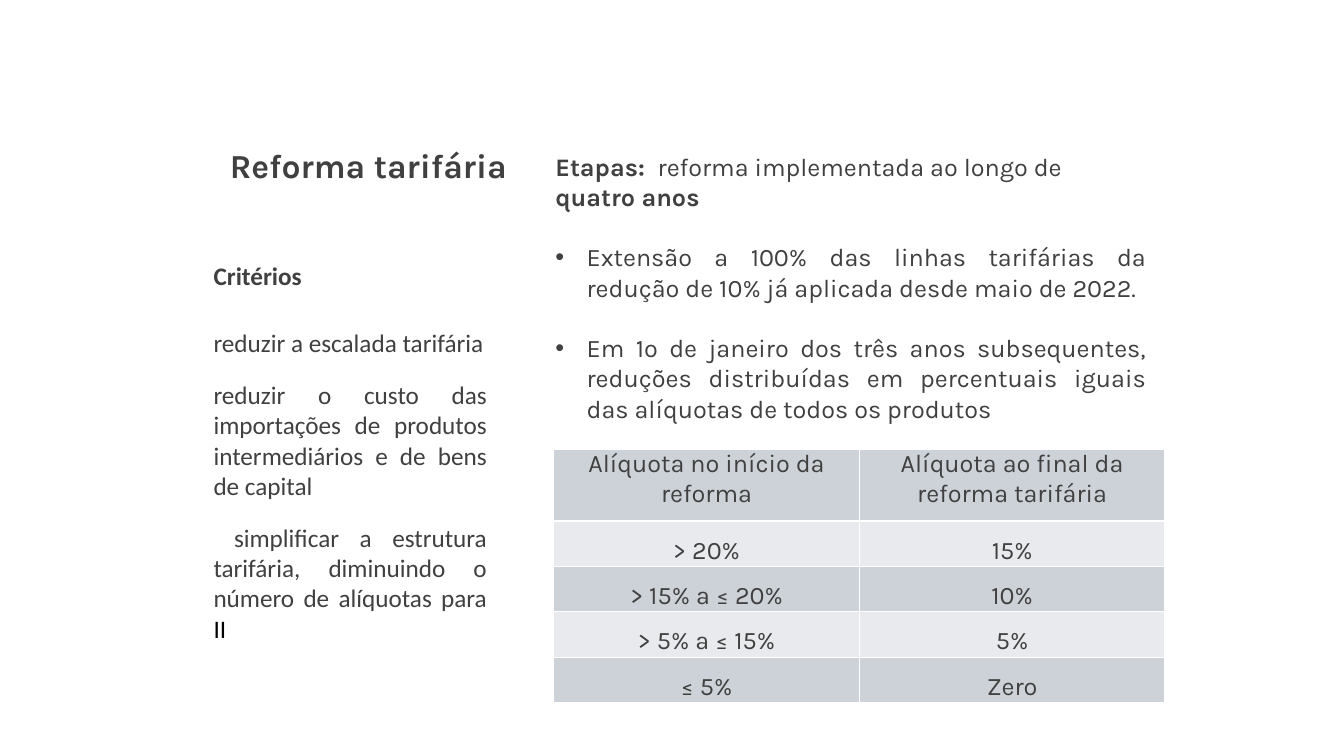
from lxml import etree
from pptx import Presentation
from pptx import util as u
from pptx.dml.color import RGBColor
from pptx.enum import text
from pptx.oxml import ns

GREY = RGBColor(0x40, 0x40, 0x40)
BLACK = RGBColor(0, 0, 0)
BAND_DARK = RGBColor(0xCC, 0xD2, 0xD8)
BAND_LIGHT = RGBColor(0xE8, 0xEA, 0xED)
JUSTIFY, CENTER = text.PP_ALIGN.JUSTIFY, text.PP_ALIGN.CENTER


def add_box(left, top, width, height):
    tf = slide.shapes.add_textbox(u.Cm(left), u.Cm(top), u.Cm(width), u.Cm(height)).text_frame
    tf.word_wrap = True
    return tf


def write(p, runs, font="Karla", size=18, **layout):
    """Fill a paragraph with (text, bold, colour) runs and set its layout."""
    for name, value in layout.items():
        setattr(p, name, value)
    for words, bold, colour in runs:
        r = p.add_run()
        r.text = words
        r.font.color.rgb = colour
        for name, value in {"name": font, "size": u.Pt(size), "bold": bold}.items():
            setattr(r.font, name, value)


prs = Presentation()
prs.slide_width, prs.slide_height = u.Cm(33.86), u.Cm(19.05)
slide = prs.slides.add_slide(prs.slide_layouts[6])

# Title
tf = add_box(5.54, 3.53, 23.8, 1.3)
write(tf.paragraphs[0], [("Reforma tarifária", True, GREY)], size=24)

# Criteria column
criteria = [
    ([("Critérios", True, GREY)], 1.5),
    ([("reduzir a escalada tarifária", False, GREY)], 1.5),
    ([("reduzir o custo das importações de produtos intermediários e de bens de capital",
       False, GREY)], 1.0),
    ([(" simplificar a estrutura tarifária, diminuindo o número de alíquotas para ", False, GREY),
      ("II", False, BLACK)], 1.0),
]
tf = add_box(5.13, 6.05, 7.39, 9.3)
for i, (runs, spacing) in enumerate(criteria):
    p = tf.add_paragraph() if i else tf.paragraphs[0]
    write(p, runs, font="Calibri", alignment=JUSTIFY, line_spacing=spacing,
          space_before=u.Pt(3.6), space_after=u.Pt(12))

# Stages of the reform
tf = add_box(13.74, 3.68, 15.39, 7.4)
write(tf.paragraphs[0], [("Etapas:  ", True, GREY),
                         ("reforma implementada ao longo de ", False, GREY),
                         ("quatro anos", True, GREY)])
stages = [
    "Extensão a 100% das linhas tarifárias da redução de 10% já aplicada desde maio de 2022.",
    "Em 1º de janeiro dos três anos subsequentes, reduções distribuídas em percentuais iguais "
    "das alíquotas de todos os produtos",
]
for stage in stages:
    p = tf.add_paragraph()
    write(p, [(stage, False, GREY)], alignment=JUSTIFY, space_before=u.Pt(21.6))
    pPr = p._p.get_or_add_pPr()
    pPr.set("marL", str(u.Cm(0.79)))
    pPr.set("indent", str(-u.Cm(0.79)))
    etree.SubElement(pPr, ns.qn("a:buFont"), typeface="Arial")
    etree.SubElement(pPr, ns.qn("a:buChar"), char="•")

# Tariff table
rates = [
    ("Alíquota no início da reforma", "Alíquota ao final da reforma tarifária"),
    ("> 20%", "15%"),
    ("> 15% a ≤ 20%", "10%"),
    ("> 5% a ≤ 15%", "5%"),
    ("≤ 5%", "Zero"),
]
table = slide.shapes.add_table(len(rates), 2, u.Cm(13.95), u.Cm(11.33),
                               u.Cm(15.4), u.Cm(5.9)).table
table.first_row = table.horz_banding = False
for i, row in enumerate(rates):
    table.rows[i].height = u.Cm(1.02 if i else 1.8)
    for j, words in enumerate(row):
        cell = table.cell(i, j)
        margins = {"margin_left": 0.18, "margin_right": 0.18, "margin_top": 0, "margin_bottom": 0}
        for name, value in margins.items():
            setattr(cell, name, u.Cm(value))
        write(cell.text_frame.paragraphs[0], [(words, False, GREY)], alignment=CENTER,
              line_spacing=1.5 if i else 1.0, space_after=u.Pt(12))
        # White cell borders come before the fill
        tcPr = cell._tc.get_or_add_tcPr()
        for side in ("lnL", "lnR", "lnT", "lnB"):
            ln = etree.SubElement(tcPr, ns.qn(f"a:{side}"), w=str(u.Pt(1)))
            line_fill = etree.SubElement(ln, ns.qn("a:solidFill"))
            etree.SubElement(line_fill, ns.qn("a:srgbClr"), val="FFFFFF")
        cell.fill.solid()
        cell.fill.fore_color.rgb = BAND_LIGHT if i % 2 else BAND_DARK

prs.save("out.pptx")
